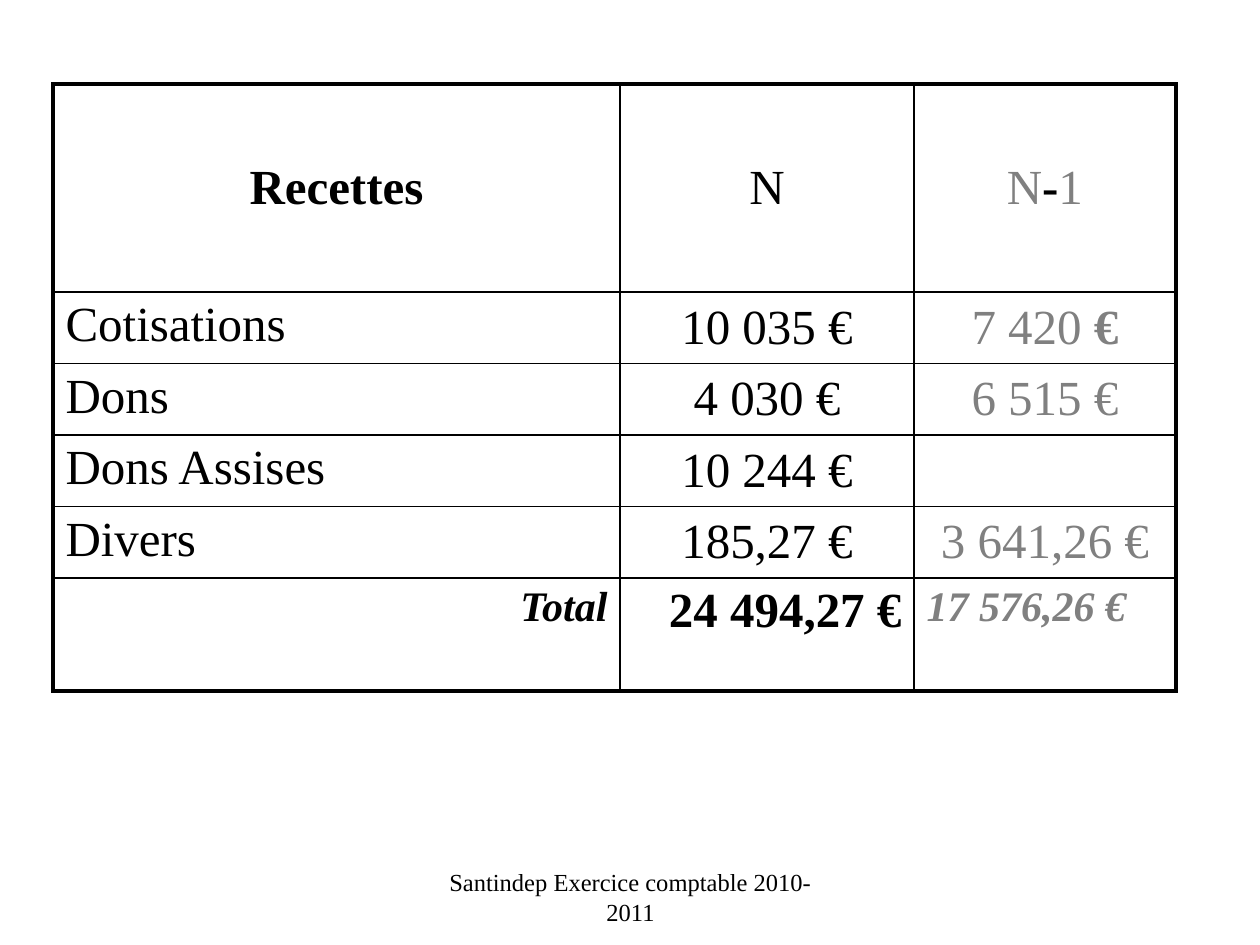
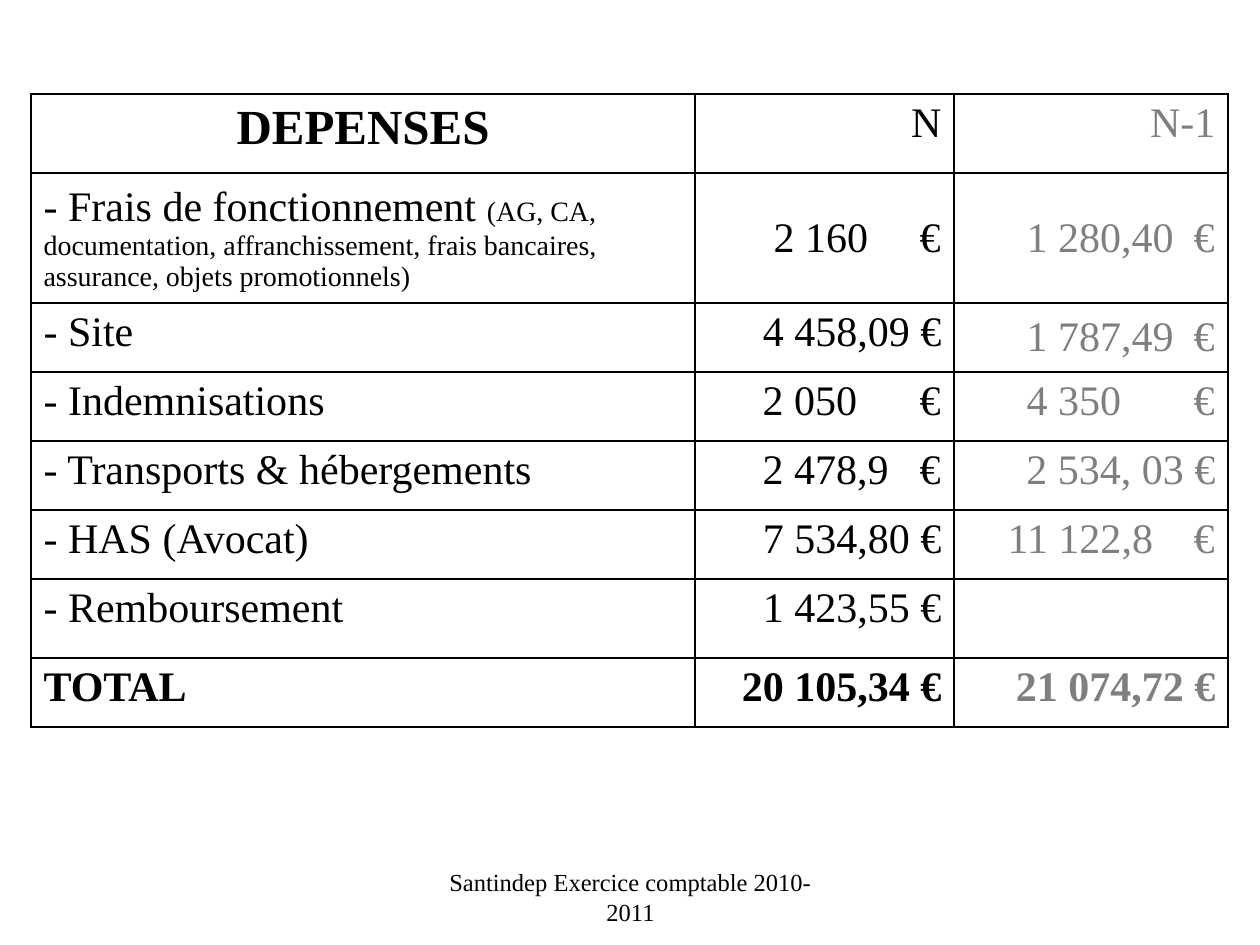
from dataclasses import dataclass

from lxml import etree
from pptx import Presentation
from pptx import util as u
from pptx.dml.color import RGBColor
from pptx.enum import text
from pptx.oxml import ns

EMU_PER_PX = 914400 / 126
LEFT, CENTER, RIGHT = text.PP_ALIGN.LEFT, text.PP_ALIGN.CENTER, text.PP_ALIGN.RIGHT
TOP, MIDDLE = text.MSO_ANCHOR.TOP, text.MSO_ANCHOR.MIDDLE


@dataclass(frozen=True)
class Theme:
    font: str = "Times New Roman"
    ink: str = "000000"
    income_grey: str = "808080"
    expense_grey: str = "7F7F7F"
    large: int = 28
    medium: int = 24
    small: int = 16
    footer: int = 14
    thin: float = 1
    thick: float = 2.25


THEME = Theme()


@dataclass
class Run:
    text: str
    size: int = THEME.medium
    color: str = THEME.ink
    bold: bool = False
    italic: bool = False


@dataclass
class Cell:
    runs: list
    align: int = LEFT
    anchor: int = TOP
    tabs: tuple = ()


def px(n):
    return u.Emu(round(n * EMU_PER_PX))


def add_runs(p, runs, align):
    p.alignment = align
    for run in runs:
        r = p.add_run()
        r.text = run.text
        r.font.name = THEME.font
        r.font.size = u.Pt(run.size)
        r.font.bold = run.bold
        r.font.italic = run.italic
        r.font.color.rgb = RGBColor.from_string(run.color)


def set_tabs(p, tabs):
    """Set tab stops given as (position in px, 'l' or 'r')."""
    tab_list = etree.SubElement(p._p.get_or_add_pPr(), ns.qn("a:tabLst"))
    for position, kind in tabs:
        etree.SubElement(tab_list, ns.qn("a:tab"), pos=str(px(position)), algn=kind)


def set_borders(cell, widths):
    """Draw the left, right, top and bottom borders, widths in points."""
    tc_pr = cell._tc.get_or_add_tcPr()
    for i, (side, width) in enumerate(zip("LRTB", widths)):
        ln = etree.Element(ns.qn(f"a:ln{side}"), w=str(u.Pt(width)))
        fill = etree.SubElement(ln, ns.qn("a:solidFill"))
        etree.SubElement(fill, ns.qn("a:srgbClr"), val=THEME.ink)
        tc_pr.insert(i, ln)


def add_account_table(s, left, top, widths, heights, rows, outer):
    frame = s.shapes.add_table(len(heights), len(widths), px(left), px(top),
                               px(sum(widths)), px(sum(heights)))
    table = frame.table
    table.first_row = table.horz_banding = False
    for column, width in zip(table.columns, widths):
        column.width = px(width)
    for row, height in zip(table.rows, heights):
        row.height = px(height)
    last_row, last_col = len(heights) - 1, len(widths) - 1
    for i, row in enumerate(rows):
        for j, content in enumerate(row):
            cell = table.cell(i, j)
            cell.fill.background()
            edges = (j == 0, j == last_col, i == 0, i == last_row)
            set_borders(cell, [outer if edge else THEME.thin for edge in edges])
            cell.vertical_anchor = content.anchor
            p = cell.text_frame.paragraphs[0]
            add_runs(p, content.runs, content.align)
            if content.tabs:
                set_tabs(p, content.tabs)


def add_footer(s):
    tf = s.shapes.add_textbox(px(431), px(861), px(399), px(63)).text_frame
    tf.word_wrap = True
    add_runs(tf.paragraphs[0],
             [Run("Santindep Exercice comptable 2010-2011", THEME.footer)], CENTER)


def income_rows():
    grey, large = THEME.income_grey, THEME.large

    def centered(*runs):
        return Cell(list(runs), CENTER, MIDDLE)

    def line(label, current, *previous):
        return [Cell([Run(label, large)]), centered(Run(current, large)),
                centered(*previous)]

    return [
        [centered(Run("Recettes", large, bold=True)), centered(Run("N", large)),
         centered(Run("N", large, grey), Run("-", large, bold=True),
                  Run("1", large, grey))],
        line("Cotisations", "10 035 €", Run("7 420 ", large, grey),
             Run("€", large, grey, bold=True)),
        line("Dons", "4 030 €", Run("6 515 €", large, grey)),
        line("Dons Assises", "10 244 €"),
        line("Divers", "185,27 €", Run("3 641,26 €", large, grey)),
        [Cell([Run("Total", bold=True, italic=True)], RIGHT),
         Cell([Run("24 494,27 €", large, bold=True)], RIGHT),
         Cell([Run("17 576,26 €", color=grey, bold=True, italic=True)])],
    ]


def expense_rows():
    grey = THEME.expense_grey

    def current(value, **style):
        return Cell([Run(value, **style)], RIGHT)

    def previous(value, **style):
        return current(value, color=grey, **style)

    def spaced(value, start, end, color=THEME.ink, anchor=TOP):
        """Amount at one tab stop, euro sign flush right at the next."""
        return Cell([Run(f"\t{value}\t€", color=color)], LEFT, anchor,
                    ((start, "l"), (end, "r")))

    def spaced_current(value, start=55, **place):
        return spaced(value, start, 233, **place)

    def spaced_previous(value, start=60, **place):
        return spaced(value, start, 248, grey, **place)

    def label(value, **style):
        return Cell([Run(value, **style)])

    running_costs = Cell([
        Run("- Frais de fonctionnement "),
        Run("(AG, CA, documentation, affranchissement, frais bancaires, "
            "assurance, objets promotionnels)", THEME.small)], anchor=MIDDLE)
    return [
        [Cell([Run("DEPENSES", THEME.large, bold=True)], CENTER),
         current("N"), previous("N-1")],
        [running_costs, spaced_current("2 160", 66, anchor=MIDDLE),
         spaced_previous("1 280,40", anchor=MIDDLE)],
        [label("- Site"), current("4 458,09 €"),
         spaced_previous("1 787,49", anchor=MIDDLE)],
        [label("- Indemnisations"), spaced_current("2 050"), spaced_previous("4 350")],
        [label("- Transports & hébergements"), spaced_current("2 478,9"),
         previous("2 534, 03 €")],
        [label("- HAS (Avocat)"), current("7 534,80 €"),
         spaced_previous("11 122,8", 41)],
        [label("- Remboursement"), current("1 423,55 €"), Cell([])],
        [label("TOTAL", bold=True), current("20 105,34 €", bold=True),
         previous("21 074,72 €", bold=True)],
    ]


def main():
    prs = Presentation()
    prs.slide_width, prs.slide_height = px(1260), px(945)
    tables = [
        (53, 84, [567, 294, 262], [208] + [67] * 4 + [113], income_rows(), THEME.thick),
        (31, 94, [664, 259, 274], [79, 130] + [69] * 4 + [79, 69], expense_rows(),
         THEME.thin),
    ]
    for table in tables:
        s = prs.slides.add_slide(prs.slide_layouts[6])
        add_footer(s)
        add_account_table(s, *table)
    prs.save("out.pptx")


if __name__ == "__main__":
    main()
